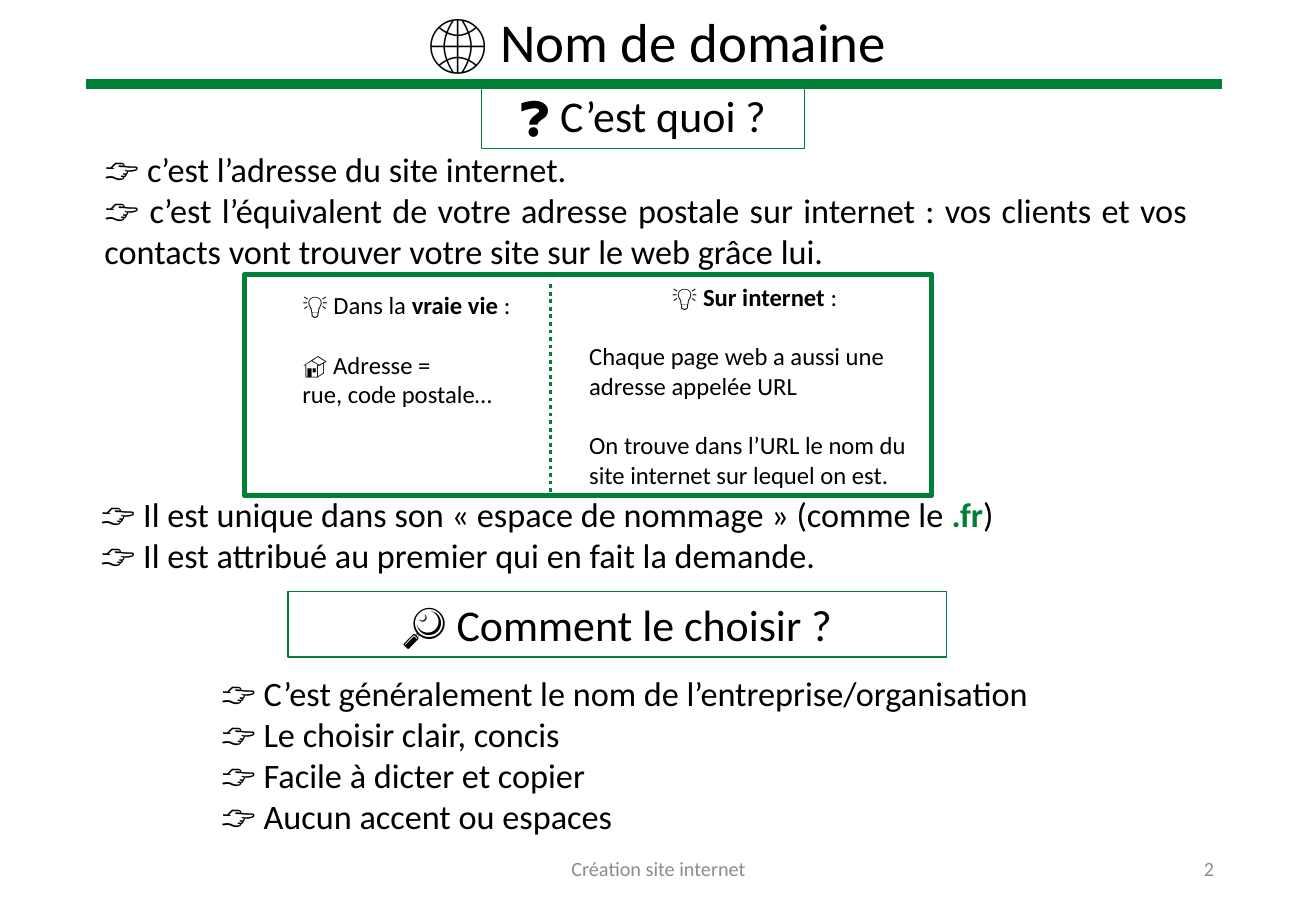
from dataclasses import dataclass
from typing import Optional

import lxml.etree
import pptx
import pptx.dml.color
import pptx.enum.dml
import pptx.enum.shapes
import pptx.enum.text
import pptx.oxml.ns
import pptx.util

Pt = pptx.util.Pt
RGB = pptx.dml.color.RGBColor
Align = pptx.enum.text.PP_ALIGN
Anchor = pptx.enum.text.MSO_ANCHOR
qn = pptx.oxml.ns.qn


@dataclass(frozen=True)
class Theme:
    font: str = "Calibri"
    ink: RGB = RGB(0, 0, 0)
    green: RGB = RGB(0x00, 0x80, 0x37)
    grey: RGB = RGB(0x8C, 0x8C, 0x8C)
    title: float = 32.5
    heading: float = 26
    body: float = 20.3
    panel: float = 14.6
    footer: float = 12
    panel_gap: float = 17.8


THEME = Theme()


@dataclass(frozen=True)
class Box:
    left: float
    top: float
    width: float
    height: float


@dataclass(frozen=True)
class Piece:
    text: str
    bold: bool = False
    color: Optional[RGB] = None


@dataclass(frozen=True)
class Line:
    pieces: tuple[Piece, ...]
    align: Optional[Align] = None
    gap: float = 0


@dataclass(frozen=True)
class Block:
    """Text with its place; placeholder is the layout index it fills, if any."""
    box: Box
    lines: tuple[Line, ...]
    size: float
    align: Align = Align.LEFT
    color: RGB = THEME.ink
    anchor: Anchor = Anchor.TOP
    placeholder: Optional[int] = None
    framed: bool = False
    spacing: float = 1.0


@dataclass(frozen=True)
class Rule:
    start: tuple[float, float]
    end: tuple[float, float]
    weight: float
    dash: Optional[pptx.enum.dml.MSO_LINE] = None


def plain(*texts: str) -> tuple[Line, ...]:
    return tuple(Line((Piece(text),)) for text in texts)


TITLE = Block(Box(53.3, -25.9, 672.5, 104.4), plain("🌐 Nom de domaine"), THEME.title,
              Align.CENTER, anchor=Anchor.MIDDLE, placeholder=0, spacing=0.9)
WHAT = Block(Box(285.1, 49, 191.5, 38.9), plain("❓ C’est quoi ?"), THEME.heading,
             Align.CENTER, placeholder=1, framed=True)
DEFINITION = Block(
    Box(54.7, 84.2, 656, 106.6),
    plain("👉 c’est l’adresse du site internet.",
          "👉 c’est l’équivalent de votre adresse postale sur internet : vos clients et vos "
          "contacts vont trouver votre site sur le web grâce lui. "),
    THEME.body, Align.JUSTIFY, placeholder=2)
REAL_LIFE = Block(
    Box(172.1, 168.5, 161.3, 64.1),
    (Line((Piece("💡 Dans la "), Piece("vraie vie ", bold=True), Piece(":"))),
     Line((Piece("🏠 Adresse ="),), gap=THEME.panel_gap),
     Line((Piece("rue, code postale…"),))),
    THEME.panel)
ON_INTERNET = Block(
    Box(342, 163.4, 210.2, 107.3),
    (Line((Piece("💡 "), Piece("Sur internet ", bold=True), Piece(":")), Align.CENTER),
     Line((Piece("Chaque page web a aussi une adresse appelée URL"),), gap=THEME.panel_gap),
     Line((Piece("On trouve dans l’URL le nom du site internet sur lequel on est."),),
          gap=THEME.panel_gap)),
    THEME.panel)
UNIQUENESS = Block(
    Box(52.6, 288.7, 656, 57),
    (Line((Piece("👉 Il est unique dans son « espace de nommage » (comme le "),
           Piece(".fr", bold=True, color=THEME.green), Piece(")"))),
     *plain("👉 Il est attribué au premier qui en fait la demande.")),
    THEME.body, Align.JUSTIFY)
HOW = Block(Box(170.6, 350.6, 390.2, 38.9), plain("🔎 Comment le choisir ?"), THEME.heading,
            Align.CENTER, placeholder=3, framed=True)
ADVICE = Block(
    Box(123.8, 394.6, 516.2, 105.8),
    plain("👉 C’est généralement le nom de l’entreprise/organisation",
          "👉 Le choisir clair, concis",
          "👉 Facile à dicter et copier",
          "👉 Aucun accent ou espaces"),
    THEME.body, Align.JUSTIFY, placeholder=4)
FOOTER = Block(Box(258.5, 500.4, 263.5, 28.8), plain("Création site internet"),
               THEME.footer, Align.CENTER, THEME.grey, Anchor.MIDDLE)
PAGE_NUMBER = Block(Box(550.8, 500.4, 175.7, 28.8), plain("2"),
                    THEME.footer, Align.RIGHT, THEME.grey, Anchor.MIDDLE)

BLOCKS = (TITLE, WHAT, DEFINITION, REAL_LIFE, ON_INTERNET, UNIQUENESS, HOW, ADVICE,
          FOOTER, PAGE_NUMBER)
COMPARISON_PANEL = Box(144.7, 162.7, 407.5, 131)
RULES = (
    Rule((51.1, 49.9), (724.3, 49.9), 6),
    Rule((326.2, 168.5), (326.2, 293.8), 2.25, pptx.enum.dml.MSO_LINE.ROUND_DOT),
)


def write_line(paragraph, line: Line, block: Block) -> None:
    paragraph.alignment = line.align or block.align
    paragraph.line_spacing = block.spacing
    paragraph.space_before = Pt(line.gap)
    paragraph.space_after = Pt(0)
    properties = paragraph._p.get_or_add_pPr()
    properties.set("marL", "0")
    properties.set("indent", "0")
    lxml.etree.SubElement(properties, qn("a:buNone"))
    for piece in line.pieces:
        run = paragraph.add_run()
        run.text = piece.text
        run.font.name = THEME.font
        run.font.size = Pt(block.size)
        run.font.bold = piece.bold
        run.font.color.rgb = piece.color or block.color


def add_block(slide, block: Block) -> None:
    box = block.box
    place = Pt(box.left), Pt(box.top), Pt(box.width), Pt(box.height)
    if block.placeholder is None:
        shape = slide.shapes.add_textbox(*place)
    else:
        shape = slide.placeholders[block.placeholder]
        shape.left, shape.top, shape.width, shape.height = place
    if block.framed:
        shape.line.color.rgb = THEME.green
        shape.line.width = Pt(0.75)
    frame = shape.text_frame
    frame.word_wrap = True
    frame.auto_size = pptx.enum.text.MSO_AUTO_SIZE.NONE
    frame.vertical_anchor = block.anchor
    for index, line in enumerate(block.lines):
        paragraph = frame.add_paragraph() if index else frame.paragraphs[0]
        write_line(paragraph, line, block)


def add_panel(slide, box: Box) -> None:
    panel = slide.shapes.add_shape(pptx.enum.shapes.MSO_SHAPE.RECTANGLE, Pt(box.left),
                                   Pt(box.top), Pt(box.width), Pt(box.height))
    panel.shadow.inherit = False
    panel.fill.background()
    panel.line.color.rgb = THEME.green
    panel.line.width = Pt(3)


def add_rule(slide, rule: Rule) -> None:
    connector = slide.shapes.add_connector(
        pptx.enum.shapes.MSO_CONNECTOR.STRAIGHT, *map(Pt, rule.start + rule.end))
    connector.line.color.rgb = THEME.green
    connector.line.width = Pt(rule.weight)
    if rule.dash:
        connector.line.dash_style = rule.dash
    lxml.etree.SubElement(connector._element.spPr, qn("a:effectLst"))


def main() -> None:
    deck = pptx.Presentation()
    deck.slide_width, deck.slide_height = Pt(779.76), Pt(540)
    comparison_layout = deck.slide_layouts[4]
    slide = deck.slides.add_slide(comparison_layout)
    add_panel(slide, COMPARISON_PANEL)
    for rule in RULES:
        add_rule(slide, rule)
    for block in BLOCKS:
        add_block(slide, block)
    deck.save("out.pptx")


if __name__ == "__main__":
    main()
